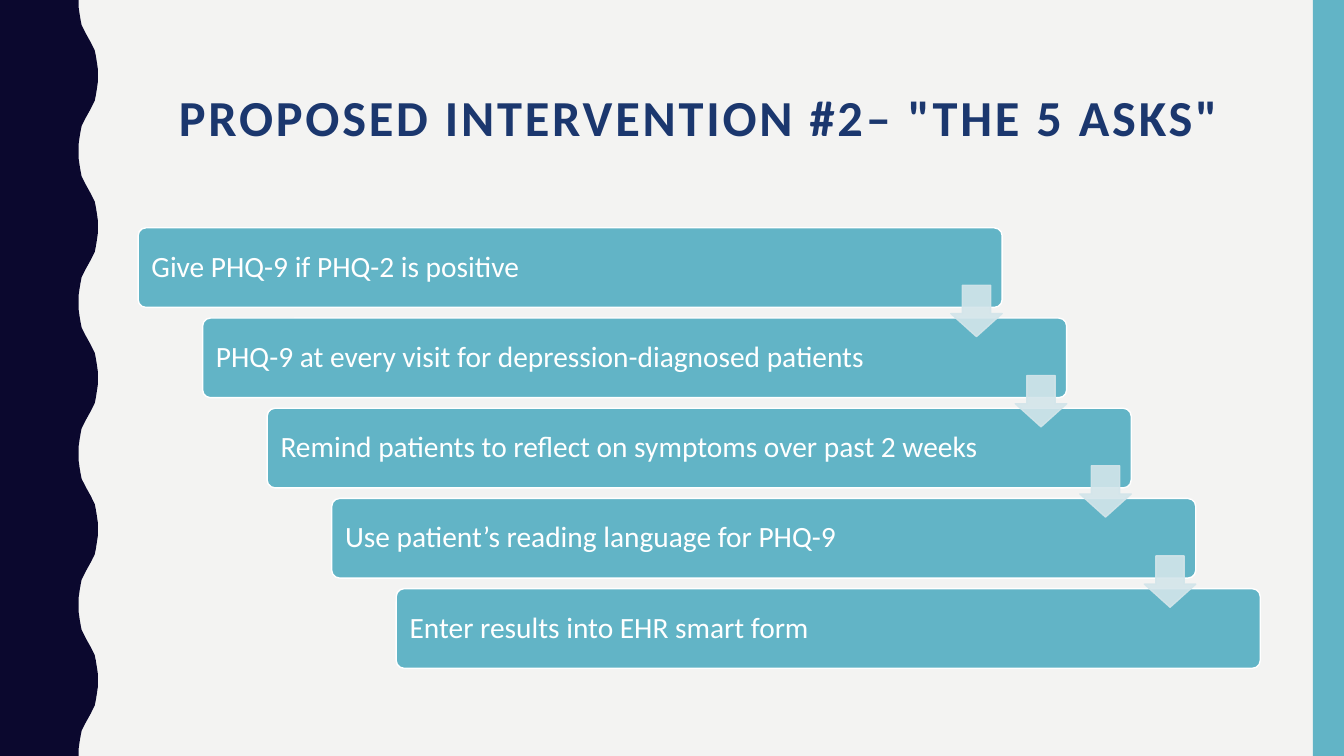
from lxml import etree
from pptx import Presentation
from pptx.dml.color import RGBColor
from pptx.enum.shapes import MSO_SHAPE
from pptx.enum.text import MSO_ANCHOR, PP_ALIGN
from pptx.oxml.ns import qn
from pptx.util import Inches, Pt

TITLE = 'PROPOSED INTERVENTION #2– "THE 5 ASKS"'
ASKS = [
    "Give PHQ-9 if PHQ-2 is positive",
    "PHQ-9 at every visit for depression-diagnosed patients",
    "Remind patients to reflect on symptoms over past 2 weeks",
    "Use patient’s reading language for PHQ-9",
    "Enter results into EHR smart form",
]

COLORS = {
    "paper": "F3F3F2",
    "navy": "0B082E",
    "teal": "62B4C6",
    "title": "1B376E",
    "arrow": "D3E5EA",
    "white": "FFFFFF",
}
FONT = "Calibri"
SLIDE_W, SLIDE_H = 13.33, 7.5

# Staircase of bars, in inches
BAR_LEFT, BAR_TOP, BAR_W, BAR_H = 1.37, 2.26, 8.57, 0.79
STEP_X, STEP_Y = 0.64, 0.895
ARROW_SIZE, ARROW_DROP = 0.51, 0.57

# Wavy edge: the first quarter of a wave; the rest follows by symmetry
WAVE_PERIOD, WAVE_MID_X = 1.5, 0.875
WAVE_QUARTER = [(0.78, 0), (0.78, 0.07), (0.79, 0.14), (0.8, 0.2),
                (0.81, 0.25), (0.83, 0.29), (0.85, 0.33)]


def rgb(name):
    return RGBColor.from_string(COLORS[name])


def paint(shape, fill, line=None, alpha=None):
    """Set fill and outline; alpha is the opacity of both in percent."""
    shape.shadow.inherit = False
    shape.fill.solid()
    shape.fill.fore_color.rgb = rgb(fill)
    if line:
        shape.line.color.rgb = rgb(line)
        shape.line.width = Pt(1)
    else:
        shape.line.fill.background()
    if alpha:
        for color in shape.element.spPr.iter(qn("a:srgbClr")):
            etree.SubElement(color, qn("a:alpha"), val=str(alpha * 1000))


def add_preset(slide, kind, left, top, width, height, adjustments=(), **look):
    shape = slide.shapes.add_shape(
        kind, Inches(left), Inches(top), Inches(width), Inches(height))
    for index, value in enumerate(adjustments):
        shape.adjustments[index] = value
    paint(shape, **look)
    return shape


def write(shape, text, size, color, bold=False, align=PP_ALIGN.LEFT,
          anchor=MSO_ANCHOR.MIDDLE, inset=0.1, spacing=None):
    """Write one formatted line; spacing is the letter spacing in points."""
    frame = shape.text_frame
    frame.word_wrap = True
    frame.vertical_anchor = anchor
    frame.margin_left = frame.margin_right = Inches(inset)
    paragraph = frame.paragraphs[0]
    paragraph.alignment = align
    paragraph.line_spacing = 0.9
    run = paragraph.add_run()
    run.text = text
    run.font.name = FONT
    run.font.size = Pt(size)
    run.font.bold = bold
    run.font.color.rgb = rgb(color)
    if spacing:
        run.font._element.set("spc", str(spacing * 100))


def wave_points():
    rise = WAVE_QUARTER + [
        (2 * WAVE_MID_X - x, WAVE_PERIOD / 2 - y)
        for x, y in reversed(WAVE_QUARTER)]
    wave = rise + [(x, WAVE_PERIOD - y) for x, y in reversed(rise[1:-1])]
    count = round(SLIDE_H / WAVE_PERIOD)
    return [(x, y + n * WAVE_PERIOD) for n in range(count) for x, y in wave]


def add_wavy_band(slide):
    edge = wave_points() + [(WAVE_QUARTER[0][0], SLIDE_H), (0, SLIDE_H)]
    builder = slide.shapes.build_freeform(0, 0, scale=1.0)
    builder.add_line_segments([(Inches(x), Inches(y)) for x, y in edge], close=True)
    paint(builder.convert_to_shape(), "navy")


def add_staircase(slide):
    for i, ask in enumerate(ASKS):
        bar = add_preset(
            slide, MSO_SHAPE.ROUNDED_RECTANGLE,
            BAR_LEFT + i * STEP_X, BAR_TOP + i * STEP_Y, BAR_W, BAR_H,
            [0.1], fill="teal", line="white")
        write(bar, ask, size=21, color="white", inset=0.11)
    for i in range(len(ASKS) - 1):
        add_preset(
            slide, MSO_SHAPE.DOWN_ARROW,
            BAR_LEFT + BAR_W - ARROW_SIZE + i * STEP_X,
            BAR_TOP + ARROW_DROP + i * STEP_Y, ARROW_SIZE, ARROW_SIZE,
            [0.45, 0.55][::-1], fill="arrow", line="arrow", alpha=90)


def main():
    deck = Presentation()
    deck.slide_width, deck.slide_height = Inches(SLIDE_W), Inches(SLIDE_H)
    slide = deck.slides.add_slide(deck.slide_layouts[6])
    slide.background.fill.solid()
    slide.background.fill.fore_color.rgb = rgb("paper")

    add_wavy_band(slide)
    add_preset(slide, MSO_SHAPE.RECTANGLE, 13.02, 0, 0.31, SLIDE_H, fill="teal")
    title = slide.shapes.add_textbox(
        Inches(1.37), Inches(0.87), Inches(11.13), Inches(0.73))
    write(title, TITLE, size=36, color="title", bold=True,
          align=PP_ALIGN.CENTER, anchor=MSO_ANCHOR.TOP, spacing=2)
    add_staircase(slide)
    deck.save("out.pptx")


if __name__ == "__main__":
    main()
